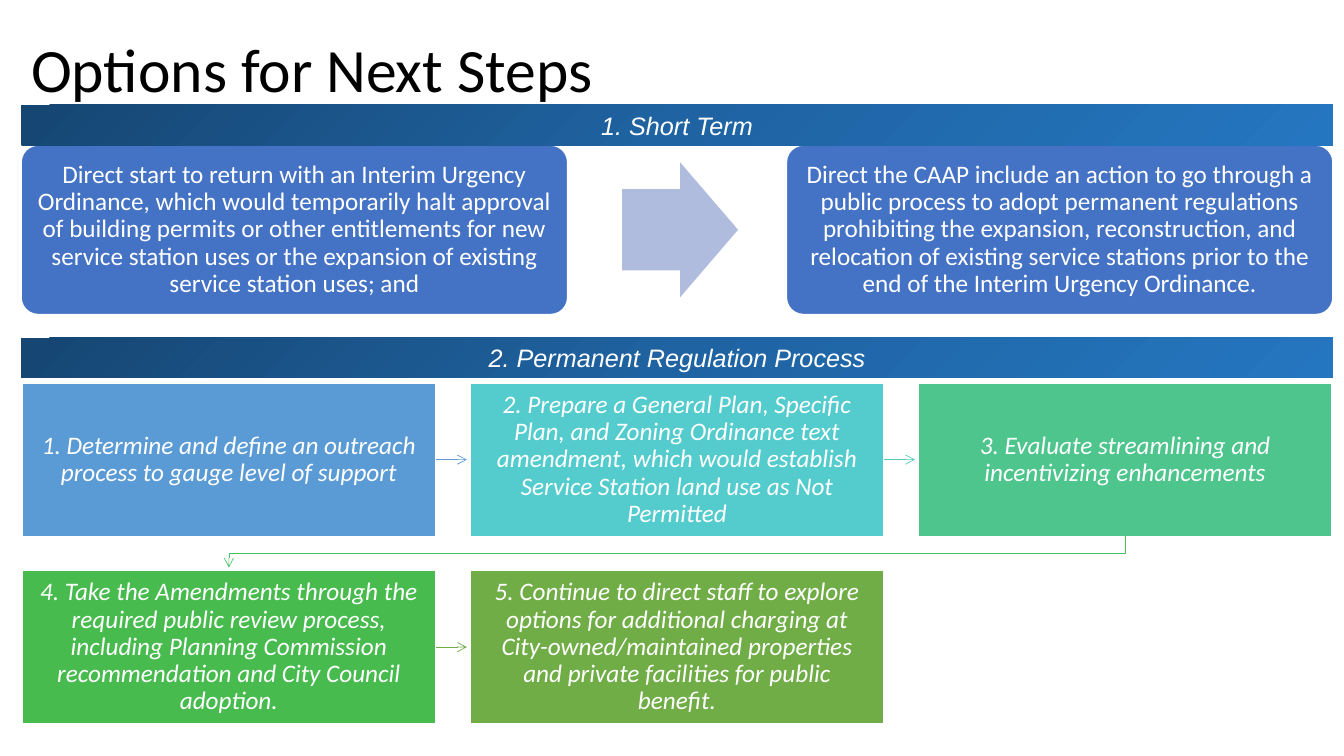
"""Build the slide on options for next steps."""
from copy import deepcopy

from lxml import etree
from pptx import Presentation
from pptx import util as u
from pptx.dml.color import RGBColor
from pptx.enum import shapes, text
from pptx.oxml.ns import qn

TITLE = "Options for Next Steps"
BANDS = [("1. Short Term", 1.04), ("2. Permanent Regulation Process", 3.35)]
CARDS = [
    "Direct start to return with an Interim Urgency Ordinance, which would temporarily halt approval of "
    "building permits or other entitlements for new service station uses or the expansion of existing "
    "service station uses; and",
    "Direct the CAAP include an action to go through a public process to adopt permanent regulations "
    "prohibiting the expansion, reconstruction, and relocation of existing service stations prior to the "
    "end of the Interim Urgency Ordinance.",
]
STEPS = [
    ("1. Determine and define an outreach process to gauge level of support", "5B9BD5"),
    ("2. Prepare a General Plan, Specific Plan, and Zoning Ordinance text amendment, which would "
     "establish Service Station land use as Not Permitted", "54CCCD"),
    ("3. Evaluate streamlining and incentivizing enhancements", "4DC58D"),
    ("4. Take the Amendments through the required public review process, including Planning Commission "
     "recommendation and City Council adoption.", "48BB4F"),
    ("5. Continue to direct staff to explore options for additional charging at City-owned/maintained "
     "properties and private facilities for public benefit.", "70AD47"),
]
LINKS = [(0, "5B9BD5"), (1, "52CAB8"), (3, "70AD47")]
COLORS = {"ink": "000000", "white": "FFFFFF", "card": "4472C4", "arrow": "B0BCDE", "return": "49BF64",
          "band_start": "164672", "band_middle": "1F63A2", "band_end": "2476C0"}
LEFT, WIDTH = 0.21, 13.01
CARD_TOP, CARD_WIDTH, CARD_HEIGHT = 1.44, 5.42, 1.68
COLUMNS, STEP_LEFT, STEP_TOP = 3, 0.22, 3.8
STEP_WIDTH, STEP_HEIGHT, STEP_PITCH_X, STEP_PITCH_Y = 4.1, 1.52, 4.445, 1.86
LINK_LENGTH = 0.31

deck = Presentation()
deck.slide_width, deck.slide_height = u.Inches(13.33), u.Inches(7.5)
page = deck.slides.add_slide(deck.slide_layouts[6])


def write(box, words, size=18, font="Calibri", color="white", italic=False, inset=None,
          align=text.PP_ALIGN.CENTER, spacing=0.9):
    frame = box.text_frame
    frame.word_wrap = True
    frame.vertical_anchor = text.MSO_ANCHOR.MIDDLE
    if inset is not None:
        frame.margin_left = frame.margin_right = u.Inches(inset)
        frame.margin_top = frame.margin_bottom = u.Inches(inset)
    para = frame.paragraphs[0]
    para.alignment, para.line_spacing = align, spacing
    span = para.add_run()
    span.text = words
    span.font.size, span.font.name, span.font.italic = u.Pt(size), font, italic
    span.font.color.rgb = RGBColor.from_string(COLORS[color])


def add_box(kind, left, top, width, height, fill=None, outline=False):
    box = page.shapes.add_shape(kind, *map(u.Inches, (left, top, width, height)))
    box.shadow.inherit = False
    if fill:
        box.fill.solid()
        box.fill.fore_color.rgb = RGBColor.from_string(fill)
    if outline:
        box.line.color.rgb = RGBColor.from_string(COLORS["white"])
        box.line.width = u.Pt(1)
    else:
        box.line.fill.background()
    return box


def style_arrow(line_shape, color):
    line_shape.line.color.rgb = RGBColor.from_string(color)
    line_shape.line.width = u.Pt(0.5)
    properties = line_shape._element.spPr
    etree.SubElement(properties.find(qn("a:ln")), qn("a:tailEnd"), type="arrow")
    if properties.find(qn("a:effectLst")) is None:
        etree.SubElement(properties, qn("a:effectLst"))


def add_band(words, top):
    band = add_box(shapes.MSO_SHAPE.RECTANGLE, LEFT, top, WIDTH, 0.4)
    band.fill.gradient()
    band.fill.gradient_angle = 315
    for stop, name in zip(band.fill.gradient_stops, ("band_start", "band_end")):
        stop.color.rgb = RGBColor.from_string(COLORS[name])
    first = band._element.spPr.find(qn("a:gradFill")).find(qn("a:gsLst"))[0]
    middle = deepcopy(first)
    middle.set("pos", "50000")
    middle.find(qn("a:srgbClr")).set("val", COLORS["band_middle"])
    first.addnext(middle)
    write(band, words, font="Arial", italic=True, spacing=1.0)


heading = page.shapes.add_textbox(*map(u.Inches, (LEFT, -0.01, 11.5, 1.45)))
write(heading, TITLE, size=44, color="ink", align=text.PP_ALIGN.LEFT)

steps = []
for index, (words, fill) in enumerate(STEPS):
    row, column = divmod(index, COLUMNS)
    step = add_box(shapes.MSO_SHAPE.RECTANGLE, STEP_LEFT + column * STEP_PITCH_X,
                   STEP_TOP + row * STEP_PITCH_Y, STEP_WIDTH, STEP_HEIGHT, fill, outline=True)
    write(step, words, italic=True, inset=0.14)
    steps.append(step)

for index, color in LINKS:
    step = steps[index]
    start, middle = step.left + step.width, step.top + step.height // 2
    link = page.shapes.add_connector(shapes.MSO_CONNECTOR.STRAIGHT, start, middle,
                                     start + u.Inches(LINK_LENGTH), middle)
    link.begin_connect(step, 3)
    style_arrow(link, color)

bottom = STEP_TOP + STEP_HEIGHT
target_x = STEP_LEFT + STEP_WIDTH / 2
source_x = target_x + (COLUMNS - 1) * STEP_PITCH_X
turn = bottom + 0.17
corners = [(source_x, turn), (target_x, turn), (target_x, bottom + LINK_LENGTH)]
builder = page.shapes.build_freeform(u.Inches(source_x), u.Inches(bottom))
builder.add_line_segments([(u.Inches(x), u.Inches(y)) for x, y in corners], close=False)
return_path = builder.convert_to_shape()
return_path.shadow.inherit = False
return_path.fill.background()
style_arrow(return_path, COLORS["return"])

for index, words in enumerate(CARDS):
    card = add_box(shapes.MSO_SHAPE.ROUNDED_RECTANGLE, LEFT + index * (WIDTH - CARD_WIDTH),
                   CARD_TOP, CARD_WIDTH, CARD_HEIGHT, COLORS["card"], outline=True)
    card.adjustments[0] = 0.1
    write(card, words, inset=0.07)

arrow = add_box(shapes.MSO_SHAPE.RIGHT_ARROW, 6.17, 1.61, 1.15, 1.34, COLORS["arrow"])
arrow.adjustments[0], arrow.adjustments[1] = 0.6, 0.5

for words, top in BANDS:
    add_band(words, top)

deck.save("out.pptx")
